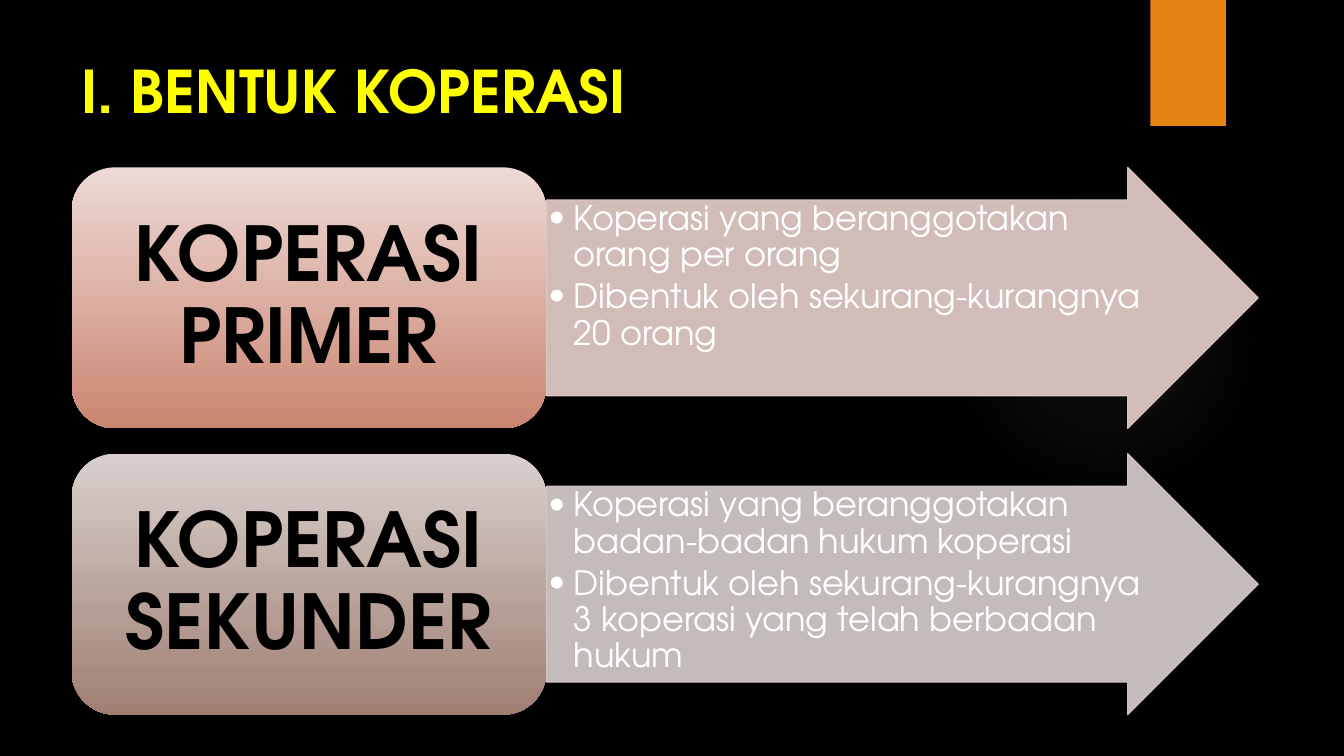
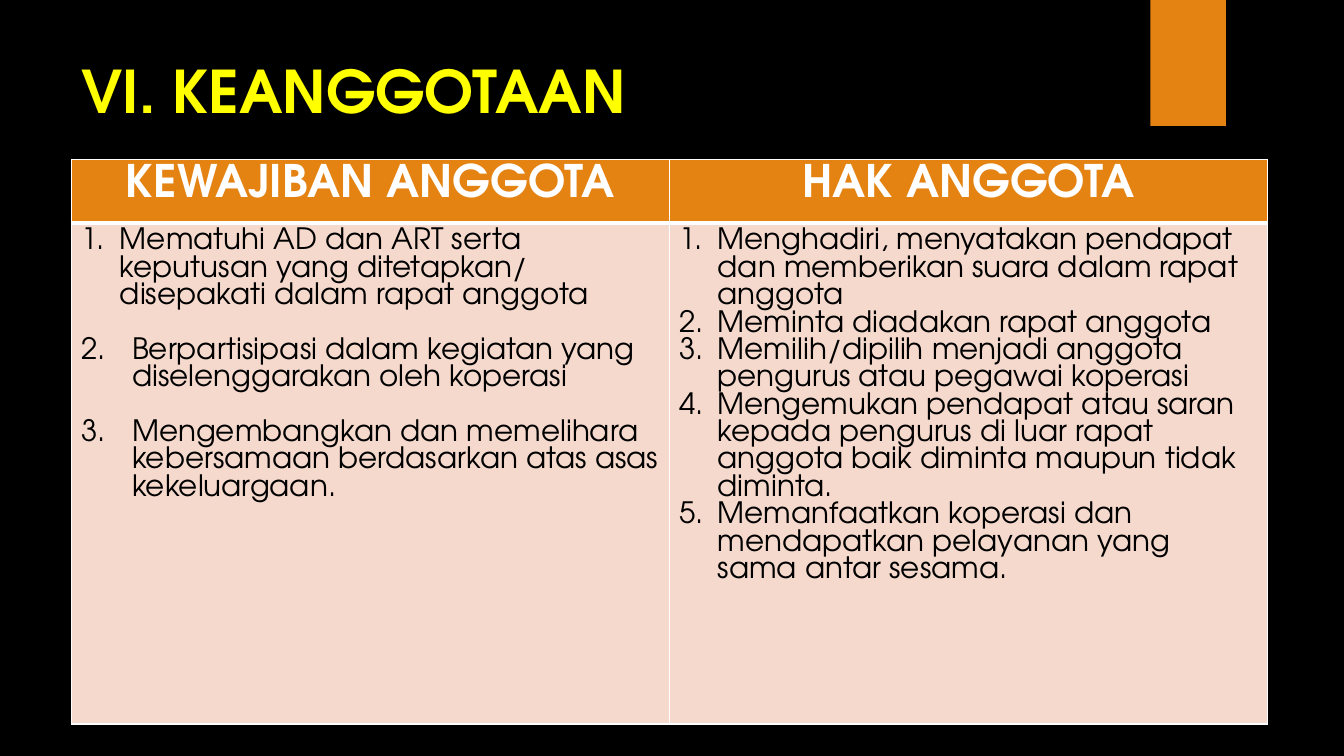
from pptx import Presentation
from pptx.dml.color import RGBColor
from pptx.enum.shapes import MSO_SHAPE
from pptx.enum.text import MSO_ANCHOR, PP_ALIGN
from pptx.oxml import parse_xml
from pptx.oxml.ns import nsdecls, qn
from pptx.util import Emu, Pt

PX = 9144  # 100 px to the inch
FONT = "TeX Gyre Adventor"
HUES = {
    "back": "000000", "band": "E48312", "glow": "A2AF92",
    "title": "FFFF00", "white": "FFFFFF", "black": "000000",
    "cell": "F5D9CC",
}
FORMS = [
    ("KOPERASI PRIMER", "E8D1CD", ("EDD9D5", "CB8571"),
     ["Koperasi yang beranggotakan orang per orang",
      "Dibentuk oleh sekurang-kurangnya 20 orang"]),
    ("KOPERASI SEKUNDER", "D9D1CF", ("D9D0CD", "A07F73"),
     ["Koperasi yang beranggotakan badan-badan hukum koperasi",
      "Dibentuk oleh sekurang-kurangnya 3 koperasi yang telah berbadan hukum"]),
]
HEADS = ["KEWAJIBAN ANGGOTA", "HAK ANGGOTA"]
DUTIES = [
    "Mematuhi AD dan ART serta keputusan yang ditetapkan/ disepakati dalam rapat anggota",
    "Berpartisipasi dalam kegiatan yang diselenggarakan oleh koperasi",
    "Mengembangkan dan memelihara kebersamaan berdasarkan atas asas kekeluargaan.",
]
RIGHTS = [
    "Menghadiri, menyatakan pendapat dan memberikan suara dalam rapat anggota",
    "Meminta diadakan rapat anggota",
    "Memilih/dipilih menjadi anggota pengurus atau pegawai koperasi",
    "Mengemukan pendapat atau saran kepada pengurus di luar rapat anggota baik diminta maupun tidak diminta.",
    "Memanfaatkan koperasi dan mendapatkan pelayanan yang sama antar sesama.",
]


def px(*nums):
    return [Emu(n * PX) for n in nums]


def rgb(code):
    return RGBColor.from_string(code)


# Text
def style(para, size, hue, bold=False, align=None, line=None):
    para.alignment = align
    para.line_spacing = line
    for run in para.runs:
        font = run.font
        font.name, font.size, font.bold = FONT, Pt(size), bold
        font.color.rgb = rgb(HUES[hue])


def mark(para, indent, *parts):
    props = para._p.get_or_add_pPr()
    props.set("marL", str(indent * PX))
    props.set("indent", str(-indent * PX))
    for part in parts:
        props.append(parse_xml(part))


def fill_paras(frame, lines):
    frame.text = "\n".join(lines)
    return frame.paragraphs


def add_text(slide, box, lines, inset=(10, 5), anchor=MSO_ANCHOR.TOP):
    frame = slide.shapes.add_textbox(*px(*box)).text_frame
    frame.word_wrap = True
    frame.vertical_anchor = anchor
    frame.margin_left = frame.margin_right = Emu(inset[0] * PX)
    frame.margin_top = frame.margin_bottom = Emu(inset[1] * PX)
    return fill_paras(frame, lines)


# Shapes
def add_shape(slide, kind, box, code):
    shape = slide.shapes.add_shape(kind, *px(*box))
    shape.shadow.inherit = False
    shape.fill.solid()
    shape.fill.fore_color.rgb = rgb(code)
    shape.line.fill.background()
    return shape


def set_grad(shape, stops, shade):
    """Stops are (position %, colour, opacity %)."""
    parts = "".join(
        f'<a:gs pos="{pos * 1000}"><a:srgbClr val="{code}">'
        f'<a:alpha val="{alpha * 1000}"/></a:srgbClr></a:gs>'
        for pos, code, alpha in stops)
    props = shape._element.spPr
    grad = parse_xml(f'<a:gradFill {nsdecls("a")} rotWithShape="1">'
                     f'<a:gsLst>{parts}</a:gsLst>{shade}</a:gradFill>')
    props.replace(props.find(qn("a:solidFill")), grad)


def add_arrow(slide, box, code):
    arrow = add_shape(slide, MSO_SHAPE.RIGHT_ARROW, box, code)
    arrow.adjustments[0], arrow.adjustments[1] = 0.75, 0.5
    arrow.line.color.rgb = rgb(code)
    arrow.line.width = Pt(0.75)
    for tint in arrow._element.spPr.iter(qn("a:srgbClr")):
        tint.append(parse_xml(f'<a:alpha {nsdecls("a")} val="90000"/>'))


# Frame shared by all slides
def add_slide(prs, title):
    slide = prs.slides.add_slide(prs.slide_layouts[6])
    glow = add_shape(slide, MSO_SHAPE.OVAL, (941, 183, 308, 308), HUES["glow"])
    set_grad(glow, [(pos, HUES["glow"], alpha)
                    for pos, alpha in ((0, 7), (36, 6), (69, 0))],
             '<a:path path="circle"><a:fillToRect l="50000" t="50000" '
             'r="50000" b="50000"/></a:path>')
    add_shape(slide, MSO_SHAPE.RECTANGLE, (1141, 0, 75, 125), HUES["band"])
    style(add_text(slide, (71, 49, 1029, 94), [title])[0], 42, "title", True)
    return slide


# One form: arrow with points, and its name
def add_form(slide, top, name, code, ends, points):
    add_arrow(slide, (542, top, 706, 259), code)
    for para in add_text(slide, (542, top + 32, 609, 194), points, (2, 2)):
        mark(para, 25, f'<a:buFont {nsdecls("a")} typeface="{FONT}"/>',
             f'<a:buChar {nsdecls("a")} char="•"/>')
        style(para, 24, "white", line=0.9)
        para.space_after = Pt(4)
    card = add_shape(slide, MSO_SHAPE.ROUNDED_RECTANGLE,
                     (71, top, 471, 259), ends[0])
    set_grad(card, [(0, ends[0], 100), (100, ends[1], 100)],
             '<a:lin ang="5400000" scaled="0"/>')
    label = add_text(slide, (83, top + 13, 446, 233), [name], (23, 11),
                     MSO_ANCHOR.MIDDLE)
    style(label[0], 54, "black", True, PP_ALIGN.CENTER, 0.9)


# Table cells
def set_cell(cell, hue, top, bottom):
    cell.fill.solid()
    cell.fill.fore_color.rgb = rgb(HUES[hue])
    props = cell._tc.get_or_add_tcPr()
    for spot, (side, width) in enumerate(
            (("L", 1), ("R", 1), ("T", top), ("B", bottom))):
        props.insert(spot, parse_xml(
            f'<a:ln{side} {nsdecls("a")} w="{Pt(width)}"><a:solidFill>'
            f'<a:srgbClr val="{HUES["white"]}"/></a:solidFill></a:ln{side}>'))


def fill_list(cell, items, indents, gap):
    for num, para in enumerate(fill_paras(cell.text_frame, items)):
        start = f' startAt="{num + 1}"' if gap and num else ""
        mark(para, indents[min(num, 1)],
             f'<a:buAutoNum {nsdecls("a")} type="arabicPeriod"{start}/>')
        style(para, 21, "black")
        if gap and num:
            para.space_before = Pt(gap)


def add_grid(slide):
    table = slide.shapes.add_table(2, 2, *px(71, 158, 1186, 556)).table
    table.horz_banding = False
    for row, high in zip(table.rows, px(59, 497)):
        row.height = high
    for col, head in enumerate(HEADS):
        cell = table.cell(0, col)
        set_cell(cell, "band", 1, 3)
        para = fill_paras(cell.text_frame, [head])[0]
        style(para, 32, "white", True, PP_ALIGN.CENTER)
        set_cell(table.cell(1, col), "cell", 3, 1)
    fill_list(table.cell(1, 0), DUTIES, (38, 50), 19.6)
    fill_list(table.cell(1, 1), RIGHTS, (38, 38), 0)


def main():
    prs = Presentation()
    prs.slide_width, prs.slide_height = px(1333, 750)
    back = prs.slide_master.background.fill
    back.solid()
    back.fore_color.rgb = rgb(HUES["back"])

    slide = add_slide(prs, "I. BENTUK KOPERASI")
    for num, form in enumerate(FORMS):
        add_form(slide, 166 + num * 284, *form)

    add_grid(add_slide(prs, "VI. KEANGGOTAAN"))
    prs.save("out.pptx")


if __name__ == "__main__":
    main()
